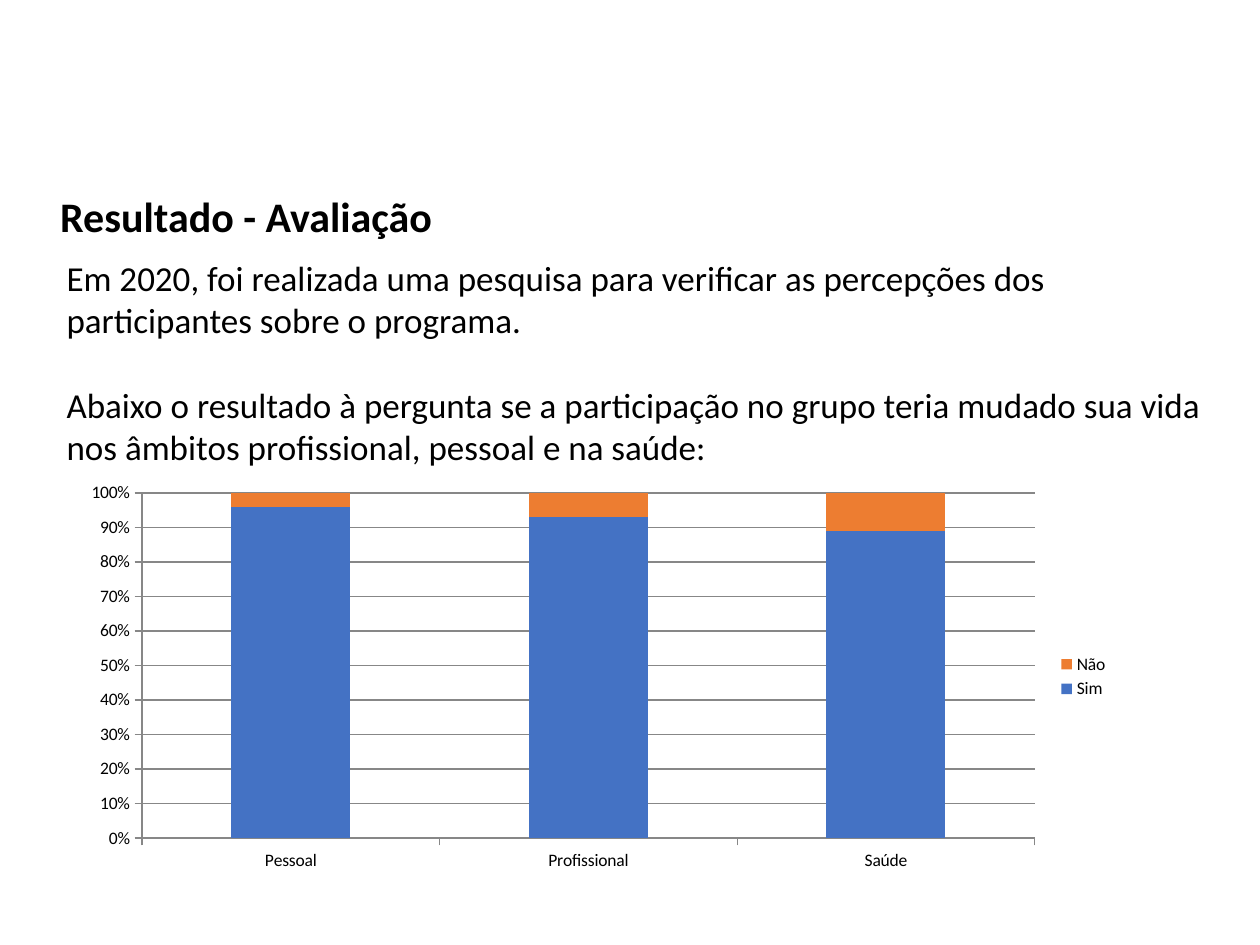
from pptx import Presentation
from pptx.chart.data import CategoryChartData
from pptx.dml.color import RGBColor
from pptx.enum.chart import XL_CHART_TYPE as ChartType
from pptx.enum.chart import XL_LEGEND_POSITION as LegendPosition
from pptx.enum.chart import XL_TICK_MARK as TickMark
from pptx.util import Inches, Pt

FONT = "Calibri"
BLACK = RGBColor(0x00, 0x00, 0x00)
GRAY = RGBColor(0x87, 0x87, 0x87)
BLUE = RGBColor(0x44, 0x72, 0xC4)
ORANGE = RGBColor(0xED, 0x7D, 0x31)

TITLE = "Resultado - Avaliação"
BODY = [
    "Em 2020, foi realizada uma pesquisa para verificar as percepções dos "
    "participantes sobre o programa.",
    "Abaixo o resultado à pergunta se a participação no grupo teria mudado "
    "sua vida nos âmbitos profissional, pessoal e na saúde:",
]
CATEGORIES = ["Pessoal", "Profissional", "Saúde"]
ANSWERS = [("Sim", [96, 93, 89], BLUE), ("Não", [4, 7, 11], ORANGE)]


def style_font(font, size, bold=False):
    """Apply the slide's typeface and text colour."""
    font.name = FONT
    font.size = Pt(size)
    font.bold = bold
    font.color.rgb = BLACK


def add_text(slide, box, texts, size, bold=False, line_spacing=1.0, gap=0):
    """Add a wrapped text box with a gap between its paragraphs."""
    frame = slide.shapes.add_textbox(*map(Inches, box)).text_frame
    frame.word_wrap = True
    frame.text = "\n".join(texts)
    for index, paragraph in enumerate(frame.paragraphs):
        paragraph.line_spacing = line_spacing
        paragraph.space_before = Pt(gap if index else 0)
        style_font(paragraph.font, size, bold)


def style_axis(axis):
    """Draw an axis with a gray line and outside ticks."""
    axis.format.line.color.rgb = GRAY
    axis.major_tick_mark = TickMark.OUTSIDE
    axis.minor_tick_mark = TickMark.NONE


def add_answer_chart(slide, box):
    """Add the stacked percentage chart of the answers."""
    data = CategoryChartData()
    data.categories = CATEGORIES
    for name, values, _ in ANSWERS:
        data.add_series(name, values)
    chart = slide.shapes.add_chart(
        ChartType.COLUMN_STACKED_100, *map(Inches, box), data
    ).chart
    style_font(chart.font, 10)
    chart.has_title = False
    chart.has_legend = True
    chart.legend.position = LegendPosition.RIGHT
    chart.legend.include_in_layout = False

    style_axis(chart.category_axis)
    value_axis = chart.value_axis
    style_axis(value_axis)
    value_axis.minimum_scale = 0
    value_axis.maximum_scale = 1
    value_axis.major_unit = 0.1
    value_axis.has_major_gridlines = True
    value_axis.major_gridlines.format.line.color.rgb = GRAY
    value_axis.tick_labels.number_format = "0%"
    value_axis.tick_labels.number_format_is_linked = False

    plot = chart.plots[0]
    plot.gap_width = 150
    plot.overlap = 100
    plot.vary_by_categories = False
    for series, (_, _, color) in zip(plot.series, ANSWERS):
        series.format.fill.solid()
        series.format.fill.fore_color.rgb = color


def main():
    """Build and save the evaluation results slide."""
    presentation = Presentation()
    presentation.slide_width = Inches(10)
    presentation.slide_height = Inches(7.5)
    slide = presentation.slides.add_slide(presentation.slide_layouts[6])
    add_text(slide, (0.38, 1.51, 8.5, 5.2), [TITLE], 24, bold=True, line_spacing=0.9)
    add_text(slide, (0.43, 1.99, 9.36, 1.78), BODY, 20, gap=24)
    add_answer_chart(slide, (0.56, 3.77, 8.34, 3.2))
    presentation.save("out.pptx")


if __name__ == "__main__":
    main()
